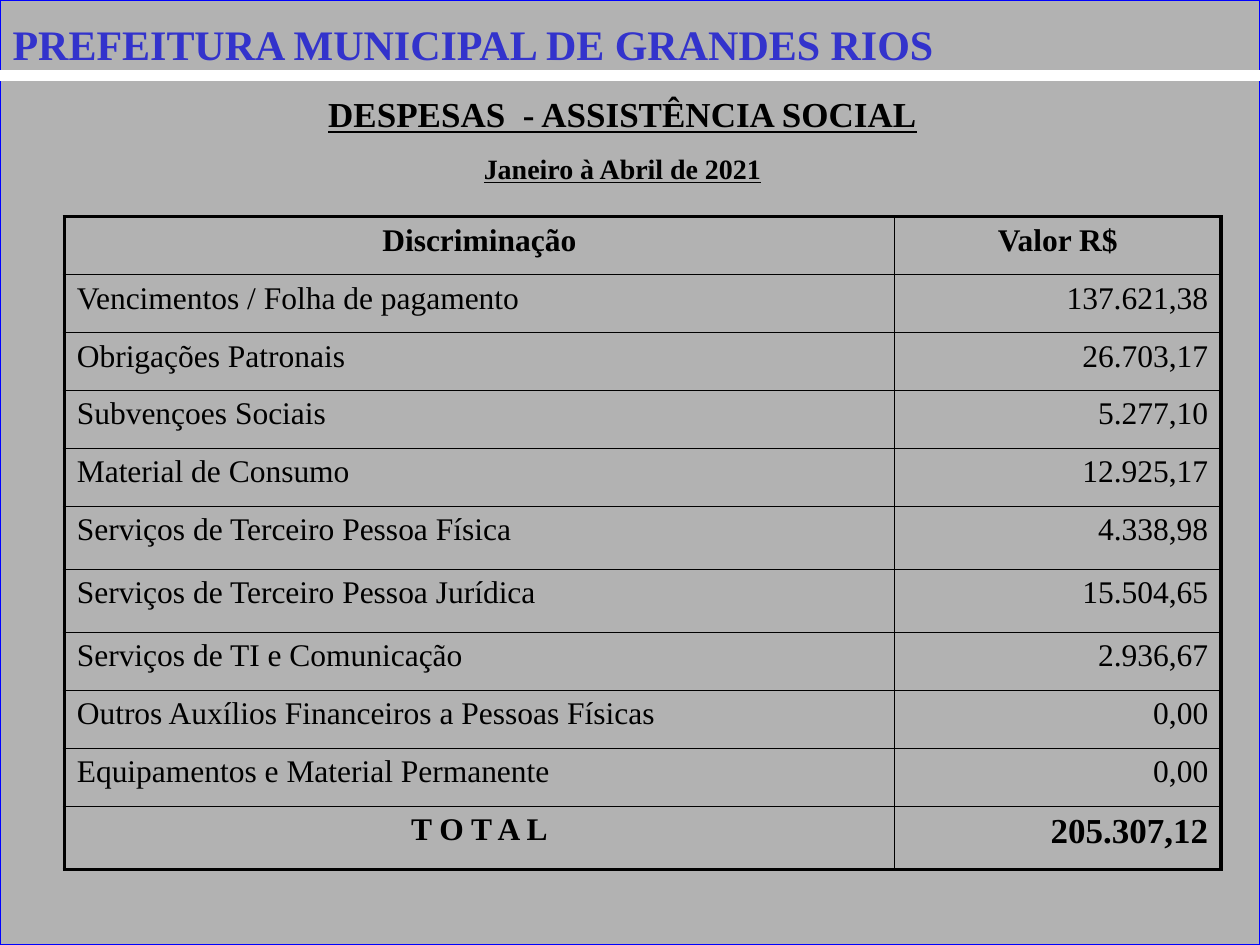
from lxml.etree import SubElement
from pptx import Presentation
from pptx.dml.color import RGBColor
from pptx.enum.shapes import MSO_CONNECTOR, MSO_SHAPE
from pptx.enum.text import MSO_ANCHOR, MSO_AUTO_SIZE, PP_ALIGN
from pptx.oxml import parse_xml
from pptx.oxml.ns import nsdecls, qn
from pptx.util import Inches, Pt

FONT = "Times New Roman"
BLACK = RGBColor(0x00, 0x00, 0x00)
WHITE = RGBColor(0xFF, 0xFF, 0xFF)
GRAY = RGBColor(0xB2, 0xB2, 0xB2)
BLUE = RGBColor(0x00, 0x00, 0xFF)
TITLE_BLUE = RGBColor(0x33, 0x33, 0xCC)

WIDTH, HEIGHT = Inches(10), Inches(7.5)
COLUMN_WIDTHS = [6.59, 2.59]
ROW_HEIGHT, TALL_ROW_HEIGHT = 0.46, 0.5
TALL_ROWS = {5, 6, 10}
THIN, THICK = Pt(1), Pt(2.25)

EXPENSES = [
    ("Discriminação", "Valor R$"),
    ("Vencimentos / Folha de pagamento", "137.621,38"),
    ("Obrigações Patronais", "26.703,17"),
    ("Subvençoes Sociais", "5.277,10"),
    ("Material de Consumo", "12.925,17"),
    ("Serviços de Terceiro Pessoa Física", "4.338,98"),
    ("Serviços de Terceiro Pessoa Jurídica", "15.504,65"),
    ("Serviços de TI e Comunicação", "2.936,67"),
    ("Outros Auxílios Financeiros a Pessoas Físicas", "0,00"),
    ("Equipamentos e Material Permanente", "0,00"),
    ("T O T A L", "205.307,12"),
]


def write(para, text, size=18, color=BLACK, bold=False, underline=False,
          align=PP_ALIGN.LEFT, before=None, spacing=None):
    para.alignment = align
    para.space_before = before
    para.line_spacing = spacing
    span = para.add_run()
    span.text = text
    span.font.name = FONT
    span.font.size = Pt(size)
    span.font.bold = bold
    span.font.underline = underline
    span.font.color.rgb = color
    return span


def add_text_shadow(span):
    effects = parse_xml(
        f'<a:effectLst {nsdecls("a")}><a:outerShdw dist="35921" dir="2700000">'
        '<a:srgbClr val="808080"/></a:outerShdw></a:effectLst>')
    span.font._element.find(qn("a:solidFill")).addnext(effects)


def add_backdrop(page):
    panel = page.shapes.add_shape(MSO_SHAPE.RECTANGLE, 0, 0, WIDTH, HEIGHT)
    panel.shadow.inherit = False
    panel.fill.solid()
    panel.fill.fore_color.rgb = GRAY
    panel.line.color.rgb = BLUE
    panel.line.width = Pt(0.75)

    rule = page.shapes.add_connector(
        MSO_CONNECTOR.STRAIGHT, 0, Inches(0.6), WIDTH, Inches(0.6))
    rule.line.color.rgb = WHITE
    rule.line.width = Pt(6)
    SubElement(rule._element.spPr, qn("a:effectLst"))


def add_title(page, text):
    title = page.shapes.title
    title.left, title.top = 0, Inches(0.1)
    title.width, title.height = Inches(9.49), Inches(0.5)
    frame = title.text_frame
    frame.auto_size = MSO_AUTO_SIZE.NONE
    frame.vertical_anchor = MSO_ANCHOR.TOP
    add_text_shadow(write(frame.paragraphs[0], text, size=24,
                          color=TITLE_BLUE, bold=True))
    # Bring the title in front of the backdrop
    title._element.getparent().append(title._element)


def add_headings(page, headings):
    box = page.shapes.add_textbox(
        Inches(0.9), Inches(0.52), Inches(8.08), Inches(1.7))
    frame = box.text_frame
    frame.word_wrap = True
    for index, (text, size) in enumerate(headings):
        para = frame.add_paragraph() if index else frame.paragraphs[0]
        write(para, text, size=size, bold=True, underline=True,
              align=PP_ALIGN.CENTER, spacing=1.5)


def set_borders(cell, widths):
    properties = cell._tc.get_or_add_tcPr()
    for position, (side, width) in enumerate(widths.items()):
        properties.insert(position, parse_xml(
            f'<a:ln{side} {nsdecls("a")} w="{width}"><a:solidFill>'
            f'<a:srgbClr val="{BLACK}"/></a:solidFill></a:ln{side}>'))


def add_expense_table(page, rows):
    last_row, last_column = len(rows) - 1, len(COLUMN_WIDTHS) - 1
    heights = [TALL_ROW_HEIGHT if index in TALL_ROWS else ROW_HEIGHT
               for index in range(len(rows))]
    table = page.shapes.add_table(
        len(rows), len(COLUMN_WIDTHS), Inches(0.51), Inches(1.72),
        Inches(sum(COLUMN_WIDTHS)), Inches(sum(heights))).table
    table.first_row = table.horz_banding = False
    for column, width in zip(table.columns, COLUMN_WIDTHS):
        column.width = Inches(width)

    for r, (values, height) in enumerate(zip(rows, heights)):
        table.rows[r].height = Inches(height)
        for c, text in enumerate(values):
            cell = table.cell(r, c)
            cell.fill.background()
            emphasis = r in (0, last_row)
            if r == 0 or (emphasis and c == 0):
                align = PP_ALIGN.CENTER
            else:
                align = PP_ALIGN.RIGHT if c else PP_ALIGN.LEFT
            write(cell.text_frame.paragraphs[0], text, bold=emphasis,
                  size=20 if (r, c) == (last_row, last_column) else 18,
                  align=align, before=Pt(3.6))
            # Thick outer frame, thin inner grid
            set_borders(cell, {
                "L": THICK if c == 0 else THIN,
                "R": THICK if c == last_column else THIN,
                "T": THICK if r == 0 else THIN,
                "B": THICK if r == last_row else THIN,
            })


def main():
    deck = Presentation()
    deck.slide_width, deck.slide_height = WIDTH, HEIGHT
    page = deck.slides.add_slide(deck.slide_layouts[5])
    add_backdrop(page)
    add_headings(page, [("DESPESAS  - ASSISTÊNCIA SOCIAL", 20),
                        ("Janeiro à Abril de 2021", 16)])
    add_expense_table(page, EXPENSES)
    add_title(page, "PREFEITURA MUNICIPAL DE GRANDES RIOS")
    deck.save("out.pptx")


if __name__ == "__main__":
    main()
